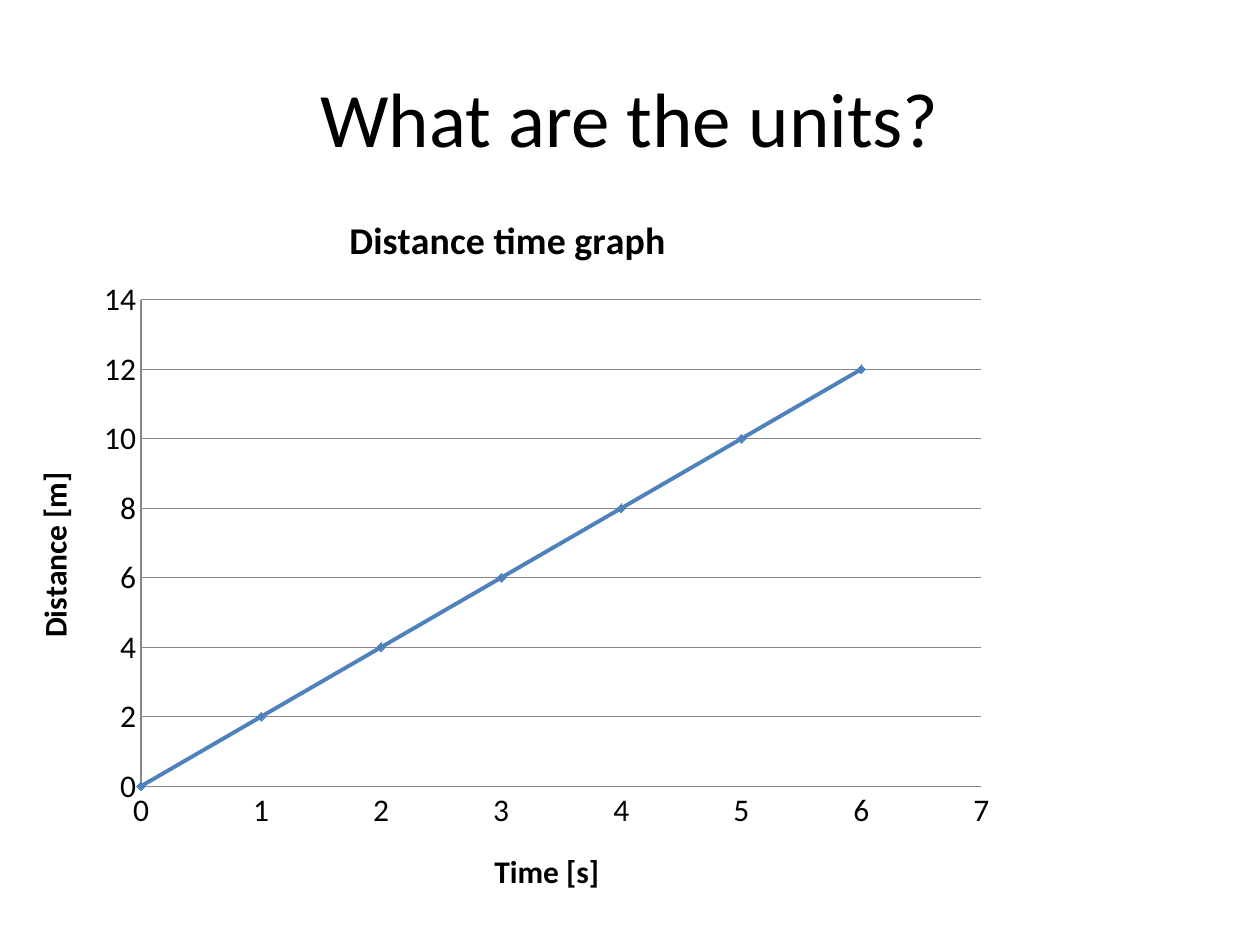
from dataclasses import dataclass

from lxml.etree import SubElement
from pptx import Presentation
from pptx.chart.data import XyChartData
from pptx.dml.color import RGBColor
from pptx.enum.chart import XL_CHART_TYPE, XL_MARKER_STYLE, XL_TICK_MARK
from pptx.enum.text import MSO_ANCHOR, PP_ALIGN
from pptx.oxml.ns import qn
from pptx.util import Inches, Pt


@dataclass(frozen=True)
class Theme:
    """Colours, font and type sizes of the slide."""
    font: str = "Calibri"
    ink: RGBColor = RGBColor(0, 0, 0)
    grid: RGBColor = RGBColor(0x87, 0x87, 0x87)
    blue: RGBColor = RGBColor(0x4F, 0x81, 0xBD)
    head: float = 44
    title: float = 21.6
    body: float = 18


THEME = Theme()


def style(font, size, bold=False):
    """Give a font the theme's face and ink."""
    font.name, font.size, font.bold = THEME.font, Pt(size), bold
    font.color.rgb = THEME.ink


def label(owner, text, size):
    """Set the bold title of a chart or an axis."""
    owner.has_title = True
    frame = (owner.chart_title if hasattr(owner, "chart_title")
             else owner.axis_title).text_frame
    frame.text = text
    style(frame.paragraphs[0].runs[0].font, size, True)


def heading(slide, box, text):
    """Place the centred slide heading in its box."""
    frame = slide.shapes.add_textbox(*map(Inches, box)).text_frame
    frame.word_wrap = True
    frame.vertical_anchor = MSO_ANCHOR.MIDDLE
    frame.text = text
    para = frame.paragraphs[0]
    para.alignment = PP_ALIGN.CENTER
    style(para.runs[0].font, THEME.head)


def stroke(line, color, width):
    """Set the colour and width of a line."""
    line.color.rgb = color
    line.width = Pt(width)


def set_plot(chart, box, inner):
    """Fix the inner plot area, given in inches from the chart's corner."""
    area = chart.element.find(".//" + qn("c:plotArea"))
    for old in area.findall(qn("c:layout")):
        area.remove(old)
    layout = SubElement(area, qn("c:layout"))
    area.insert(0, layout)
    manual = SubElement(layout, qn("c:manualLayout"))
    width, height = box[2:]
    parts = {"layoutTarget": "inner", "xMode": "edge", "yMode": "edge"}
    for key, part, whole in zip("xywh", inner, (width, height) * 2):
        parts[key] = str(round(part / whole, 4))
    for key, value in parts.items():
        SubElement(manual, qn("c:" + key)).set("val", value)


def graph(slide, box):
    """Place the distance time chart in its box."""
    data = XyChartData()
    series = data.add_series("Series 1")
    for time in range(7):
        series.add_data_point(time, 2 * time)
    chart = slide.shapes.add_chart(
        XL_CHART_TYPE.XY_SCATTER_LINES, *map(Inches, box), data).chart
    style(chart.font, THEME.body)
    chart.has_legend = False
    label(chart, "Distance time graph", THEME.title)
    set_plot(chart, box, (1.08, 0.91, 6.67, 3.86))

    axes = ((chart.category_axis, "Time [s]", 7, 1),
            (chart.value_axis, "Distance [m]", 14, 2))
    for axis, text, top, step in axes:
        label(axis, text, THEME.body)
        axis.minimum_scale, axis.maximum_scale = 0, top
        axis.major_unit = step
        axis.major_tick_mark = axis.minor_tick_mark = XL_TICK_MARK.NONE
        axis.has_major_gridlines = axis is chart.value_axis
        stroke(axis.format.line, THEME.grid, 0.75)
    stroke(chart.value_axis.major_gridlines.format.line, THEME.grid, 0.75)

    chart.plots[0].vary_by_categories = False
    curve = chart.plots[0].series[0]
    curve.smooth = False
    stroke(curve.format.line, THEME.blue, 2.25)
    mark = curve.marker
    mark.style, mark.size = XL_MARKER_STYLE.DIAMOND, 5
    mark.format.fill.solid()
    mark.format.fill.fore_color.rgb = THEME.blue
    stroke(mark.format.line, THEME.blue, 0.75)


def main():
    """Build and save the slide."""
    deck = Presentation()
    deck.slide_width, deck.slide_height = Inches(10), Inches(7.5)
    slide = deck.slides.add_slide(deck.slide_layouts[6])
    heading(slide, (0.5, 0.3, 9, 1.25), "What are the units?")
    graph(slide, (0.04, 1.47, 7.98, 5.84))
    deck.save("out.pptx")


if __name__ == "__main__":
    main()
